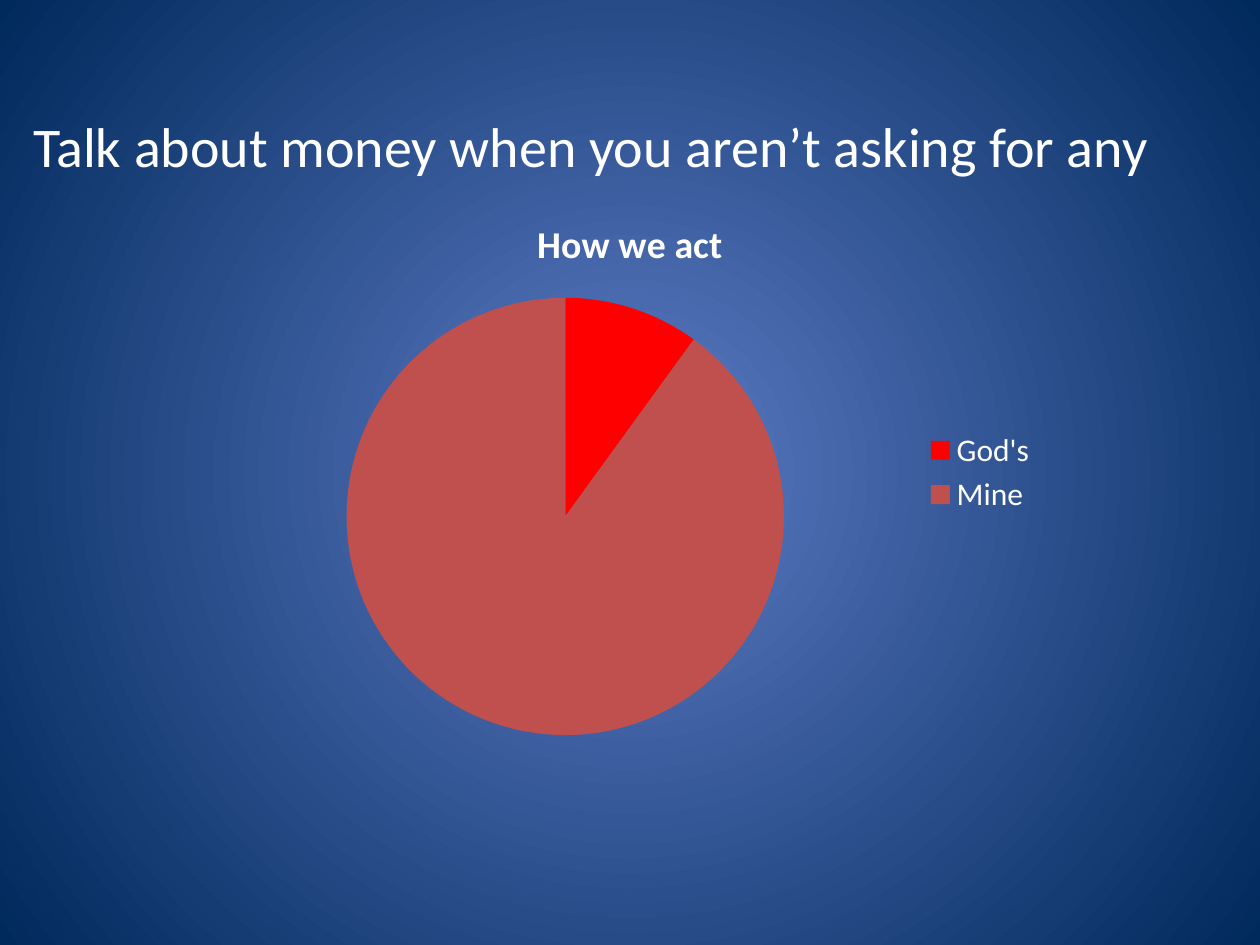
from lxml import etree
from pptx import Presentation
from pptx.chart.data import CategoryChartData
from pptx.dml.color import RGBColor
from pptx.enum.chart import XL_CHART_TYPE, XL_LEGEND_POSITION
from pptx.oxml.ns import qn
from pptx.util import Pt

PIE = XL_CHART_TYPE.PIE
RIGHT = XL_LEGEND_POSITION.RIGHT
FACE = "Calibri"
COLORS = {
    "text": "FFFFFF",
    "inner": "5E7CC5",
    "outer": "00295C",
    "gods": "FF0000",
    "mine": "C0504D",
}


def color(name):
    return RGBColor.from_string(COLORS[name])


def style(font, size, bold=False):
    font.name = FACE
    font.size = Pt(size)
    font.bold = bold
    font.color.rgb = color("text")


def paint_back(slide):
    """Fill the background with a circular gradient from the centre."""
    fill = slide.background.fill
    fill.gradient()
    for stop, name, pos in zip(fill.gradient_stops, ("inner", "outer"), (0, 1)):
        stop.color.rgb = color(name)
        stop.position = pos
    grad = slide.element.find(".//" + qn("a:gradFill"))
    line = grad.find(qn("a:lin"))
    ring = etree.Element(qn("a:path"), {"path": "circle"})
    sides = {side: "50000" for side in "ltrb"}
    etree.SubElement(ring, qn("a:fillToRect"), sides)
    grad.replace(line, ring)


def add_title(slide, box, text):
    frame = slide.shapes.add_textbox(*map(Pt, box)).text_frame
    frame.word_wrap = True
    run = frame.paragraphs[0].add_run()
    run.text = text
    style(run.font, 32)


def add_pie(slide, box, title, parts):
    """Draw a pie of (label, value, color name) parts."""
    data = CategoryChartData()
    data.categories = [label for label, _, _ in parts]
    data.add_series(title, [value for _, value, _ in parts])
    chart = slide.shapes.add_chart(PIE, *map(Pt, box), data).chart
    style(chart.font, 18)

    chart.has_title = True
    run = chart.chart_title.text_frame.paragraphs[0].add_run()
    run.text = title
    style(run.font, 21.6, bold=True)

    chart.has_legend = True
    chart.legend.position = RIGHT
    chart.legend.include_in_layout = False
    style(chart.legend.font, 18)

    plot = chart.plots[0]
    plot.vary_by_categories = True
    for i, (_, _, name) in enumerate(parts):
        fill = plot.series[0].points[i].format.fill
        fill.solid()
        fill.fore_color.rgb = color(name)


def main():
    deck = Presentation()
    deck.slide_width, deck.slide_height = Pt(720), Pt(540)
    slide = deck.slides.add_slide(deck.slide_layouts[6])
    paint_back(slide)
    add_title(slide, (12, 60, 696, 46),
              "Talk about money when you aren’t asking for any")
    add_pie(slide, (120, 110, 480, 320), "How we act",
            [("God's", 10, "gods"), ("Mine", 90, "mine")])
    deck.save("out.pptx")


if __name__ == "__main__":
    main()
